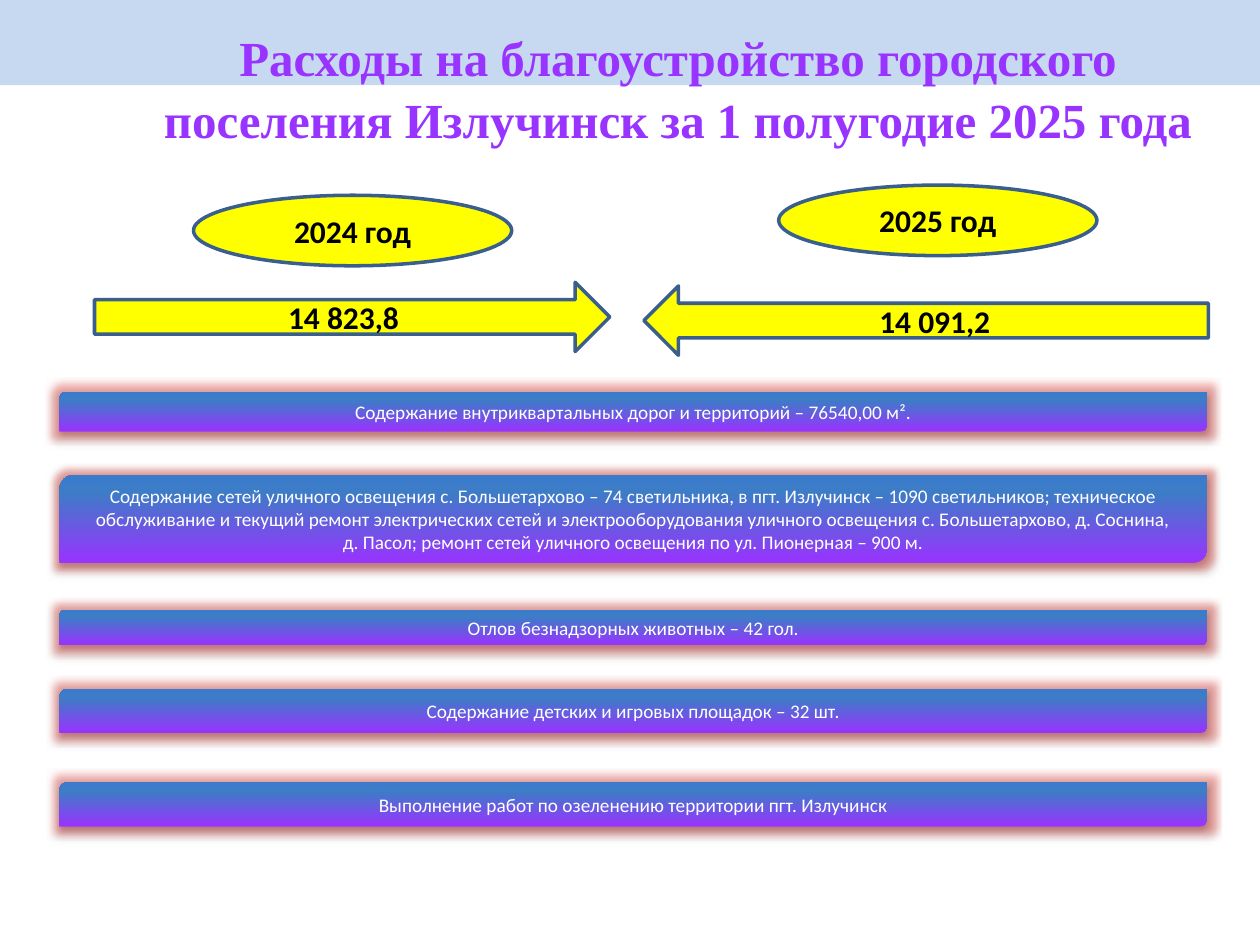
from dataclasses import dataclass

from lxml import etree
from pptx import Presentation
from pptx.dml.color import RGBColor
from pptx.enum.shapes import MSO_SHAPE
from pptx.enum.text import MSO_ANCHOR, PP_ALIGN
from pptx.oxml import parse_xml
from pptx.oxml.ns import nsdecls, qn
from pptx.util import Pt

RECT = MSO_SHAPE.RECTANGLE
OVAL = MSO_SHAPE.OVAL
RIGHT_ARROW = MSO_SHAPE.RIGHT_ARROW
LEFT_ARROW = MSO_SHAPE.LEFT_ARROW
BAR = MSO_SHAPE.ROUND_2_DIAG_RECTANGLE
CENTER = PP_ALIGN.CENTER
MIDDLE = MSO_ANCHOR.MIDDLE

PALE_BLUE = RGBColor(0xC6, 0xD9, 0xF1)
PURPLE = RGBColor(0x99, 0x33, 0xFF)
YELLOW = RGBColor(0xFF, 0xFF, 0x00)
NAVY = RGBColor(0x3A, 0x5F, 0x8C)
OUTLINE = RGBColor(0x46, 0x7A, 0xB8)
BLUE = RGBColor(0x3D, 0x7C, 0xC7)
BRIGHT_BLUE = RGBColor(0x3A, 0x7C, 0xCB)
RED = RGBColor(0xDB, 0x3A, 0x33)
BLACK = RGBColor(0, 0, 0)
WHITE = RGBColor(0xFF, 0xFF, 0xFF)

BAR_LEFT, BAR_WIDTH = 34, 656
EMU_PER_PT = 12700


@dataclass
class Figure:
    kind: MSO_SHAPE
    left: float
    top: float
    width: float
    height: float
    text: str


@dataclass
class Work:
    top: float
    height: float
    text: str


FIGURES = [
    Figure(RIGHT_ARROW, 54, 161.3, 294.5, 39.6, "14 823,8"),
    Figure(LEFT_ARROW, 367.9, 163.4, 322.6, 39.6, "14 091,2"),
    Figure(OVAL, 110.6, 111.6, 181.8, 40.3, "2024 год"),
    Figure(OVAL, 445, 105.8, 181.8, 40.3, "2025 год"),
]

WORKS = [
    Work(224, 22.6, "Содержание внутриквартальных дорог и территорий – 76540,00 м²."),
    Work(271.4, 50.4,
         "Содержание сетей уличного освещения с. Большетархово – 74 светильника, "
         "в пгт. Излучинск – 1090 светильников; техническое обслуживание и текущий "
         "ремонт электрических сетей и электрооборудования уличного освещения "
         "с. Большетархово, д. Соснина,\vд. Пасол; ремонт сетей уличного освещения "
         "по ул. Пионерная – 900 м."),
    Work(348.5, 20.2, "Отлов безнадзорных животных – 42 гол."),
    Work(393.8, 25.2, "Содержание детских и игровых площадок – 32 шт."),
    Work(447.1, 25.2, "Выполнение работ по озеленению территории пгт. Излучинск"),
]


def add_shape(slide, kind: MSO_SHAPE, left: float, top: float,
              width: float, height: float):
    sp = slide.shapes.add_shape(kind, Pt(left), Pt(top), Pt(width), Pt(height))
    sp.shadow.inherit = False
    sp.line.fill.background()
    return sp


def write(sp, text: str, size: float, color: RGBColor, bold: bool = False,
          name: str = "Calibri") -> None:
    tf = sp.text_frame
    tf.word_wrap = True
    p = tf.paragraphs[0]
    p.text = text
    p.alignment = CENTER
    for r in p.runs:
        r.font.name = name
        r.font.size = Pt(size)
        r.font.bold = bold
        r.font.color.rgb = color


def add_title(slide, text: str) -> None:
    sp = slide.shapes.add_textbox(Pt(63.4), Pt(10), Pt(648), Pt(90))
    write(sp, text, 28, PURPLE, bold=True, name="Times New Roman")
    p = sp.text_frame.paragraphs[0]
    p.line_spacing = 1.06
    p.runs[0]._r.get_or_add_rPr().insert(0, parse_xml(
        f'<a:ln {nsdecls("a")} w="{int(0.83 * EMU_PER_PT)}"><a:solidFill>'
        f'<a:srgbClr val="{OUTLINE}"/></a:solidFill></a:ln>'))


def add_figure(slide, figure: Figure) -> None:
    sp = add_shape(slide, figure.kind, figure.left, figure.top,
                   figure.width, figure.height)
    sp.fill.solid()
    sp.fill.fore_color.rgb = YELLOW
    sp.line.color.rgb = NAVY
    sp.line.width = Pt(2)
    sp.text_frame.vertical_anchor = MIDDLE
    write(sp, figure.text, 18, BLACK, bold=True)


def set_gradient(sp) -> None:
    """Fill from purple at the bottom to blue at the top."""
    sp.fill.gradient()
    sp.fill.gradient_angle = 90
    stops = sp._element.spPr.find(qn("a:gradFill")).find(qn("a:gsLst"))
    for gs in list(stops):
        stops.remove(gs)
    for percent, color in ((0, PURPLE), (80, BLUE), (100, BRIGHT_BLUE)):
        gs = etree.SubElement(stops, qn("a:gs"), pos=str(percent * 1000))
        etree.SubElement(gs, qn("a:srgbClr"), val=str(color))


def add_effect(effects, tag: str, color: RGBColor, alpha: int, **attrs: str) -> None:
    effect = etree.SubElement(effects, qn(tag), **attrs)
    clr = etree.SubElement(effect, qn("a:srgbClr"), val=str(color))
    etree.SubElement(clr, qn("a:alpha"), val=str(alpha * 1000))


def add_work(slide, work: Work) -> None:
    sp = add_shape(slide, BAR, BAR_LEFT, work.top, BAR_WIDTH, work.height)
    set_gradient(sp)
    effects = sp._element.spPr.find(qn("a:effectLst"))
    add_effect(effects, "a:glow", RED, 40, rad=str(8 * EMU_PER_PT))
    add_effect(effects, "a:outerShdw", BLACK, 35, blurRad=str(int(3.1 * EMU_PER_PT)),
               dist=str(int(1.8 * EMU_PER_PT)), dir="5400000", rotWithShape="0")
    sp.text_frame.vertical_anchor = MIDDLE
    write(sp, work.text, 11, WHITE)


def main() -> None:
    prs = Presentation()
    prs.slide_width, prs.slide_height = Pt(720), Pt(540)
    slide = prs.slides.add_slide(prs.slide_layouts[6])

    band = add_shape(slide, RECT, 0, 0, 720, 48.6)
    band.fill.solid()
    band.fill.fore_color.rgb = PALE_BLUE

    add_title(slide, "Расходы на благоустройство городского поселения Излучинск "
                     "за 1 полугодие 2025 года")
    for figure in FIGURES:
        add_figure(slide, figure)
    for work in WORKS:
        add_work(slide, work)
    prs.save("out.pptx")


if __name__ == "__main__":
    main()
